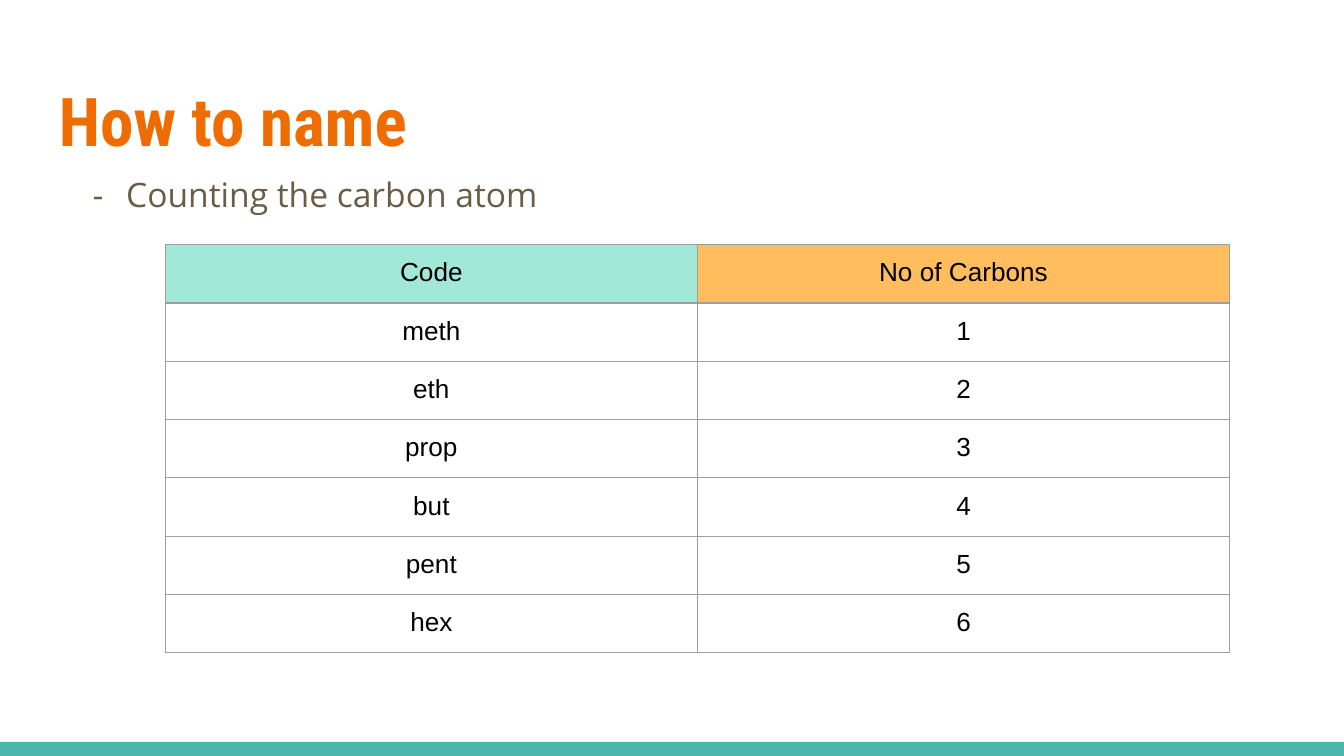
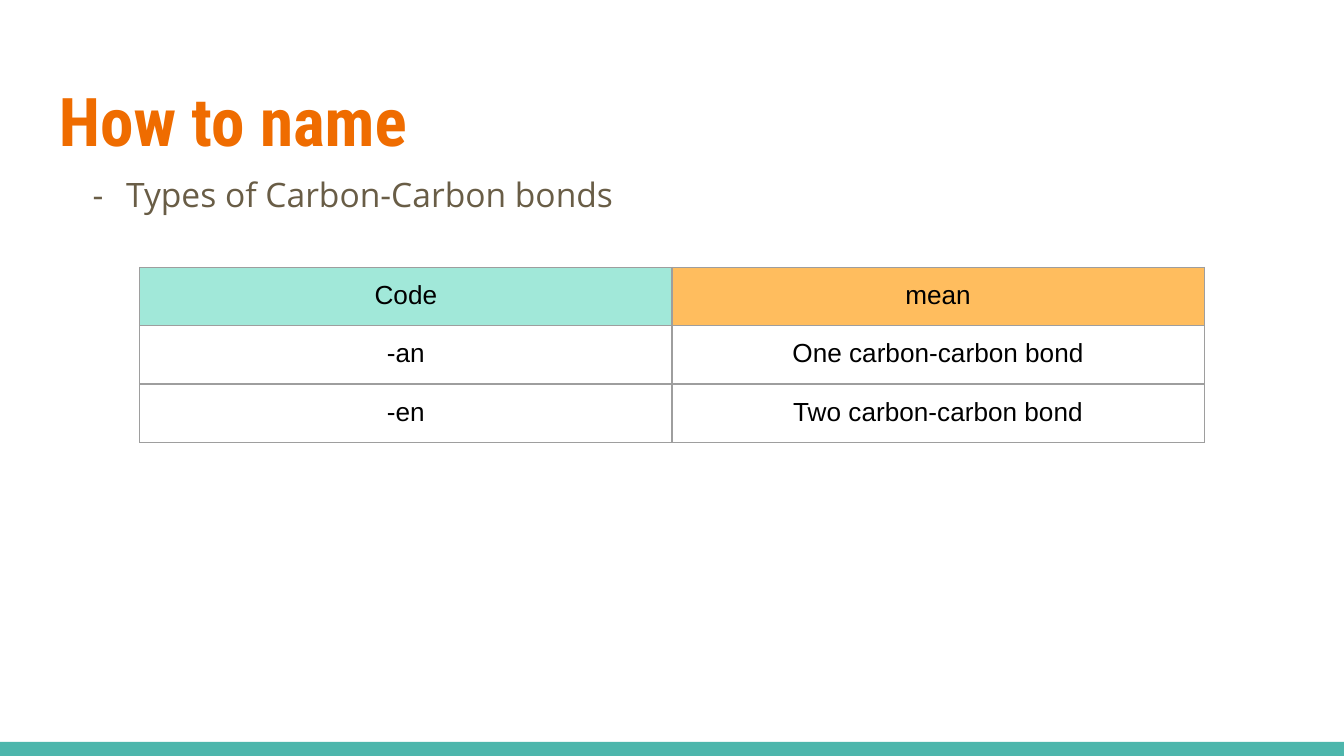
from dataclasses import dataclass

from lxml.etree import SubElement
from pptx import Presentation
from pptx.dml.color import RGBColor
from pptx.enum.shapes import MSO_SHAPE as Shape
from pptx.enum.text import MSO_ANCHOR as Anchor, PP_ALIGN as Align
from pptx.oxml.ns import qn
from pptx.util import Emu, Inches, Pt

# Colours
TEAL = RGBColor(0x4D, 0xB6, 0xAC)
MINT = RGBColor(0xA1, 0xE8, 0xD9)
AMBER = RGBColor(0xFF, 0x98, 0x00)
ORANGE = RGBColor(0xEF, 0x6C, 0x00)
BROWN = RGBColor(0x69, 0x5D, 0x46)
BLACK = RGBColor(0x00, 0x00, 0x00)
GREY = RGBColor(0x9E, 0x9E, 0x9E)

# Slide size and a square grid, 100 columns across
WIDTH = Inches(10)
HEIGHT = Emu(WIDTH * 9 // 16)
UNIT = WIDTH // 100
INSET = Inches(0.1)
BORDER = Pt(0.75)
AMBER_ALPHA = 63

# Font formats
TITLE = {"name": "Roboto Condensed", "size": Pt(36), "bold": True}
BODY = {"name": "Open Sans", "size": Pt(18)}
CELL = {"name": "Arial", "size": Pt(14)}


@dataclass(frozen=True)
class Area:
    """A place on the grid, in columns and rows."""
    left: float
    top: float
    width: float
    height: float

    def lengths(self) -> list[Emu]:
        return [Emu(round(value * UNIT))
                for value in (self.left, self.top, self.width, self.height)]


@dataclass(frozen=True)
class NamingPage:
    point: str
    left: float
    top: float
    rows: tuple[tuple[str, str], ...]


BAND_AREA = Area(0, 55.2, 100, 1.05)
TITLE_AREA = Area(3.4, 4.9, 93.2, 7.7)
BODY_AREA = Area(3.4, 11.5, 93.2, 43.3)
COLUMN_WIDTH, ROW_HEIGHT = 39.6, 4.2

CARBON_CODES = ("meth", "eth", "prop", "but", "pent", "hex")
PAGES = (
    NamingPage("Counting the carbon atom", 12.3, 18.2, (
        ("Code", "No of Carbons"),
        *((code, str(count)) for count, code in enumerate(CARBON_CODES, 1)),
    )),
    NamingPage("Types of Carbon-Carbon bonds", 10.4, 19.9, (
        ("Code", "mean"),
        ("-an", "One carbon-carbon bond"),
        ("-en", "Two carbon-carbon bond"),
    )),
)


def apply_format(target, values: dict) -> None:
    for name, value in values.items():
        setattr(target, name, value)


def write(para, text: str, font: dict, color: RGBColor) -> None:
    span = para.add_run()
    span.text = text
    apply_format(span.font, font)
    span.font.color.rgb = color


def add_text(page, area: Area, text: str, font: dict, color: RGBColor):
    box = page.shapes.add_textbox(*area.lengths())
    apply_format(box.text_frame, {
        "word_wrap": True, "vertical_anchor": Anchor.TOP,
        "margin_left": INSET, "margin_right": INSET,
        "margin_top": INSET, "margin_bottom": INSET,
    })
    para = box.text_frame.paragraphs[0]
    write(para, text, font, color)
    return para


def add_dash(para, color: RGBColor) -> None:
    """Hang the paragraph on a coloured dash."""
    props = para._p.get_or_add_pPr()
    props.set("marL", str(Inches(0.5)))
    props.set("indent", str(-Inches(0.25)))
    tint = SubElement(props, qn("a:buClr"))
    SubElement(tint, qn("a:srgbClr"), val=str(color))
    SubElement(props, qn("a:buFont"), typeface=BODY["name"])
    SubElement(props, qn("a:buChar"), char="-")


def add_band(page) -> None:
    band = page.shapes.add_shape(Shape.RECTANGLE, *BAND_AREA.lengths())
    band.shadow.inherit = False
    band.fill.solid()
    band.fill.fore_color.rgb = TEAL
    band.line.fill.background()


def style_cell(cell, is_header: bool, column: int) -> None:
    props = cell._tc.get_or_add_tcPr()
    # Borders come before the fill
    for side in ("lnL", "lnR", "lnT", "lnB"):
        line = SubElement(props, qn(f"a:{side}"), w=str(BORDER))
        solid = SubElement(line, qn("a:solidFill"))
        SubElement(solid, qn("a:srgbClr"), val=str(GREY))
    if not is_header:
        cell.fill.background()
        return
    cell.fill.solid()
    cell.fill.fore_color.rgb = (MINT, AMBER)[column]
    if column == 1:
        tint = props.find(qn("a:solidFill")).find(qn("a:srgbClr"))
        SubElement(tint, qn("a:alpha"), val=str(AMBER_ALPHA * 1000))


def add_code_table(page, content: NamingPage) -> None:
    count = len(content.rows)
    area = Area(content.left, content.top,
                2 * COLUMN_WIDTH, count * ROW_HEIGHT)
    table = page.shapes.add_table(count, 2, *area.lengths()).table
    apply_format(table, {"first_row": False, "horz_banding": False})
    for row, texts in enumerate(content.rows):
        for column, text in enumerate(texts):
            cell = table.cell(row, column)
            apply_format(cell, {
                "margin_left": INSET, "margin_right": INSET,
                "margin_top": INSET, "margin_bottom": INSET,
            })
            para = cell.text_frame.paragraphs[0]
            para.alignment = Align.CENTER
            write(para, text, CELL, BLACK)
            style_cell(cell, row == 0, column)


def add_naming_page(deck, content: NamingPage) -> None:
    page = deck.slides.add_slide(deck.slide_layouts[6])
    add_band(page)
    add_text(page, TITLE_AREA, "How to name", TITLE, ORANGE)
    para = add_text(page, BODY_AREA, content.point, BODY, BROWN)
    apply_format(para, {"line_spacing": 1.15, "space_after": Pt(16)})
    add_dash(para, BROWN)
    add_code_table(page, content)


def main() -> None:
    deck = Presentation()
    apply_format(deck, {"slide_width": WIDTH, "slide_height": HEIGHT})
    for content in PAGES:
        add_naming_page(deck, content)
    deck.save("out.pptx")


if __name__ == "__main__":
    main()
